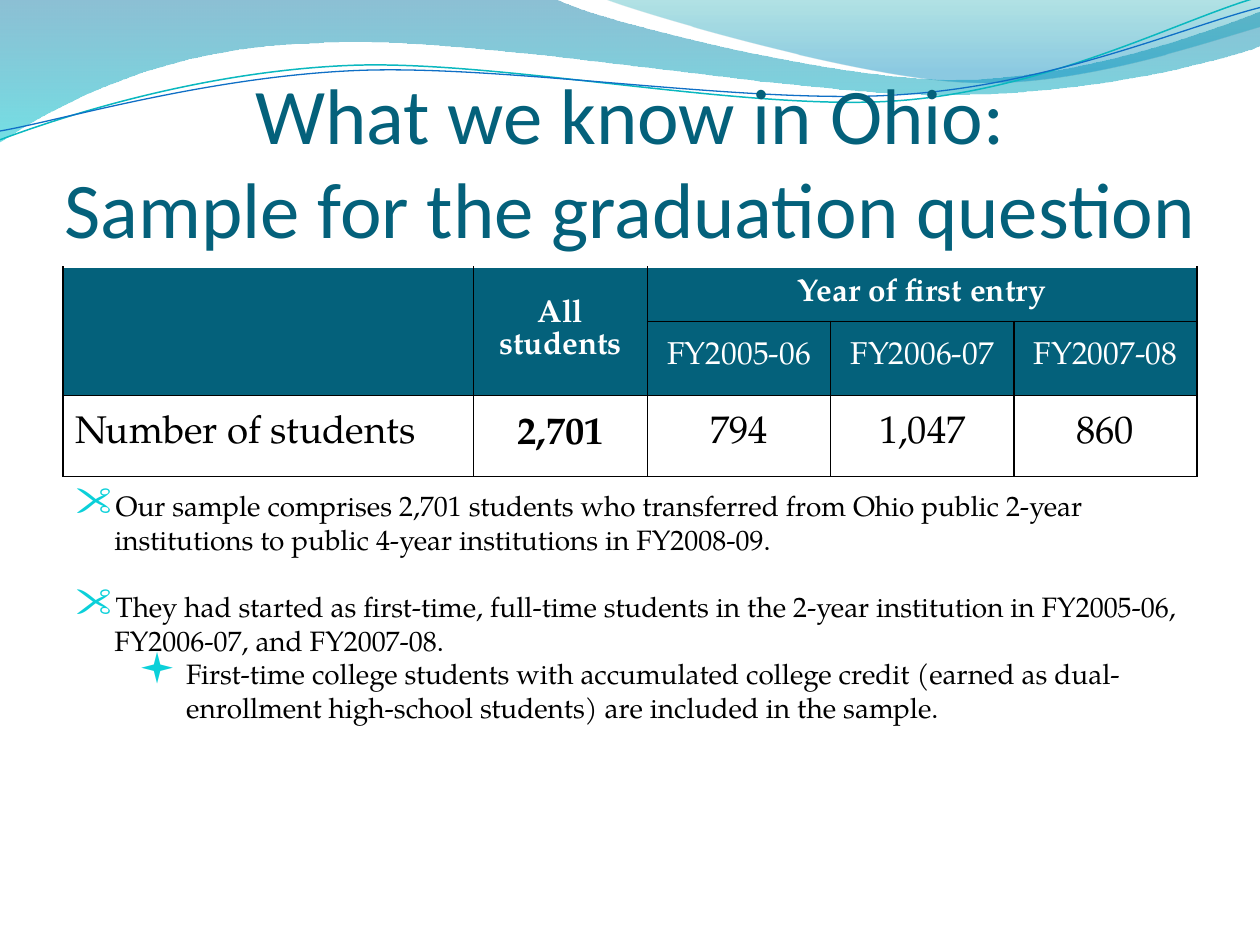
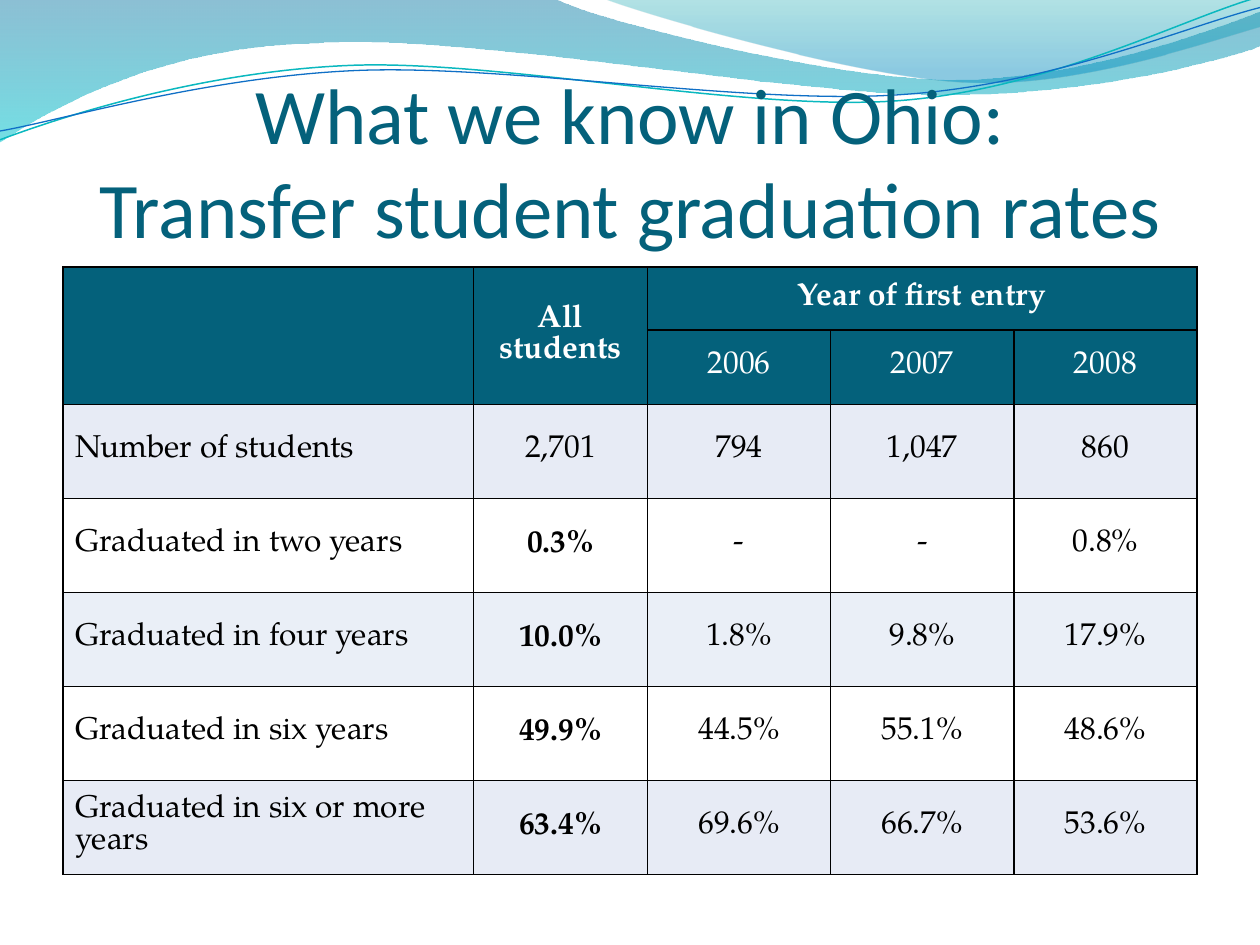
from lxml import etree
from pptx import Presentation
from pptx import util as u
from pptx.dml.color import RGBColor
from pptx.enum import text
from pptx.oxml import ns

# Shared look
COLORS = {"teal": "04617B", "white": "FFFFFF", "black": "000000", "bullet": "0BD0D9",
          "band": "E7EBF5", "light_band": "EAEFF7", "cyan_line": "0AB8BF", "blue_line": "0F6FC6"}
TITLE_FONT, BODY_FONT, BULLET_FONT = "Calibri", "TeX Gyre Pagella", "Wingdings"
TABLE_LEFT, TABLE_TOP, CONTENT_WIDTH = 0.5, 2.12, 9
LABEL_WIDTH, TOTAL_WIDTH = 3.26, 1.38

# Waves: points are (x, y); six numbers make a Bezier curve
# Gradient stops: position, colour, opacity in percent
WAVES = [
    {"start": (0, 0), "stops": [(0, "0074A1", 45), (1, "00C6CF", 55)],
     "segments": [(4.4, -0.01), (4.76, 0.17, 6.64, 0.63, 7.58, 0.63),
                  (8.53, 0.63, 9.58, 0.26, 10, 0.09), (10.01, 0.36),
                  (9.83, 0.44, 8.7, 0.76, 7.46, 0.75), (6.22, 0.75, 3.82, 0.28, 2.57, 0.34),
                  (1.29, 0.36, 0.46, 0.83, -0.01, 1.13)]},
    {"start": (4.79, -0.01), "stops": [(0, "00A1A9", 30), (0.8, "008BBF", 45)],
     "segments": [(5.09, 0.11, 6.82, 0.62, 7.69, 0.65), (8.56, 0.69, 9.61, 0.32, 10, 0.21),
                  (10, 0)]},
    {"start": (0, 1.11), "line": ("cyan_line", 0.85),
     "segments": [(0.48, 0.93, 1.58, 0.57, 2.77, 0.52), (3.95, 0.47, 5.93, 0.89, 7.13, 0.8),
                  (8.33, 0.71, 9.38, 0.15, 9.98, -0.02)]},
    {"start": (0, 1.04), "line": ("blue_line", 0.75),
     "segments": [(0.47, 0.96, 1.64, 0.61, 2.83, 0.56), (4.03, 0.51, 5.97, 0.84, 7.17, 0.75),
                  (8.36, 0.67, 9.41, 0.21, 10, 0.06)]},
]

# Slide content
SLIDES = [
    {"title": "What we know in Ohio:\vSample for the graduation question",
     "years": ["FY2005-06", "FY2006-07", "FY2007-08"],
     "rows": [["Number of students", "2,701", "794", "1,047", "860"]],
     "bold_totals": [True], "fills": ["white"], "body_size": 22, "top_border": "white",
     "header_heights": [0.43, 0.49], "table_height": 1.56,
     "bullets": [
         (0, 0, "Our sample comprises 2,701 students who transferred from Ohio public 2-year "
                "institutions to public 4-year institutions in FY2008-09."),
         (0, 19.2, "They had started as first-time, full-time students in the 2-year institution "
                   "in FY2005-06, FY2006-07, and FY2007-08."),
         (1, 0, "First-time college students with accumulated college credit (earned as "
                "dual-enrollment high-school students) are included in the sample."),
     ]},
    {"title": "What we know in Ohio:\vTransfer student graduation rates",
     "years": ["2006", "2007", "2008"],
     "rows": [["Number of students", "2,701", "794", "1,047", "860"],
              ["Graduated in two years", "0.3%", "-", "-", "0.8%"],
              ["Graduated in four years", "10.0%", "1.8%", "9.8%", "17.9%"],
              ["Graduated in six years", "49.9%", "44.5%", "55.1%", "48.6%"],
              ["Graduated in six or more years", "63.4%", "69.6%", "66.7%", "53.6%"]],
     "bold_totals": [False, True, True, True, True],
     "fills": ["band", "white", "light_band", "white", "band"],
     "body_size": 18, "top_border": "black",
     "header_heights": [0.5, 0.57], "table_height": 4.8, "bullets": []},
]
# Bullet level: character, left margin, hanging indent
BULLET_LEVELS = [("•", 0.31, 0.31), ("▪", 0.88, 0.38)]


def rgb(name):
    return RGBColor.from_string(COLORS[name])


def apply(target, values):
    for name, value in values.items():
        setattr(target, name, value)


def add_run(paragraph, words, size, color, font=BODY_FONT, bold=False):
    paragraph.text = words
    for run in paragraph.runs:
        apply(run.font, {"name": font, "size": u.Pt(size), "bold": bold})
        run.font.color.rgb = rgb(color)


def add_text_box(slide, left, top, width, height):
    frame = slide.shapes.add_textbox(*map(u.Inches, (left, top, width, height))).text_frame
    frame.word_wrap = True
    return frame


# Waves at the top
def bend(shape, segments):
    """Turn each run of three straight steps into one Bezier curve."""
    steps = iter(list(shape._element.iter(ns.qn("a:lnTo"))))
    for segment in segments:
        step = next(steps)
        if len(segment) == 6:
            step.tag = ns.qn("a:cubicBezTo")
            for _ in range(2):
                extra = next(steps)
                step.append(extra[0])
                extra.getparent().remove(extra)


def add_wave(slide, wave):
    points = [(u.Inches(x), u.Inches(y)) for segment in [wave["start"], *wave["segments"]]
              for x, y in zip(segment[::2], segment[1::2])]
    builder = slide.shapes.build_freeform(*points[0])
    builder.add_line_segments(points[1:], close="stops" in wave)
    shape = builder.convert_to_shape()
    shape.shadow.inherit = False
    if "line" in wave:
        color, width = wave["line"]
        shape.fill.background()
        shape.line.color.rgb = rgb(color)
        shape.line.width = u.Pt(width)
    else:
        shape.line.fill.background()
        fill_wave(shape, wave["stops"])
    bend(shape, wave["segments"])


def fill_wave(shape, stops):
    shape.fill.gradient()
    shape.fill.gradient_angle = 270
    for stop, (position, color, _) in zip(shape.fill.gradient_stops, stops):
        stop.position = position
        stop.color.rgb = RGBColor.from_string(color)
    gradient = shape._element.spPr.find(ns.qn("a:gradFill"))
    for element, (_, _, opacity) in zip(gradient.iter(ns.qn("a:srgbClr")), stops):
        etree.SubElement(element, ns.qn("a:alpha"), val=str(opacity * 1000))


def add_title(slide, words):
    frame = add_text_box(slide, 0.5, 0.77, CONTENT_WIDTH, 1.25)
    apply(frame, {"margin_left": 0, "margin_right": 0, "margin_bottom": 0,
                  "vertical_anchor": text.MSO_ANCHOR.BOTTOM})
    paragraph = frame.paragraphs[0]
    paragraph.alignment = text.PP_ALIGN.CENTER
    add_run(paragraph, words, 45, "teal", TITLE_FONT)


# Table
def set_borders(cell, top_color):
    properties = cell._tc.get_or_add_tcPr()
    for index, side in enumerate("LRTB"):
        line = etree.Element(ns.qn(f"a:ln{side}"), w=str(u.Pt(1)))
        fill = etree.SubElement(line, ns.qn("a:solidFill"))
        color = COLORS[top_color if side == "T" else "black"]
        etree.SubElement(fill, ns.qn("a:srgbClr"), val=color)
        properties.insert(index, line)


def add_table(slide, content):
    headers = [["", "All students", "Year of first entry", "", ""], ["", ""] + content["years"]]
    rows = headers + content["rows"]
    count = len(content["rows"])
    body_height = (content["table_height"] - sum(content["header_heights"])) / count
    heights = content["header_heights"] + [body_height] * count
    year_width = (CONTENT_WIDTH - LABEL_WIDTH - TOTAL_WIDTH) / 3
    widths = [LABEL_WIDTH, TOTAL_WIDTH] + [year_width] * 3
    table = slide.shapes.add_table(
        len(rows), len(widths), u.Inches(TABLE_LEFT), u.Inches(TABLE_TOP),
        u.Inches(CONTENT_WIDTH), u.Inches(content["table_height"])).table
    apply(table, {"first_row": False, "horz_banding": False})
    for column, width in zip(table.columns, widths):
        column.width = u.Inches(width)
    for row, height in zip(table.rows, heights):
        row.height = u.Inches(height)

    fills = ["teal"] * 2 + content["fills"]
    bold_totals = [True, False] + content["bold_totals"]
    for r, row in enumerate(rows):
        header = r < len(headers)
        size = 18 if header else content["body_size"]
        for c, words in enumerate(row):
            cell = table.cell(r, c)
            apply(cell, {"vertical_anchor": text.MSO_ANCHOR.MIDDLE, "margin_top": u.Inches(0.04)})
            cell.fill.solid()
            cell.fill.fore_color.rgb = rgb(fills[r])
            set_borders(cell, content["top_border"] if r == 0 else "black")
            if words:
                paragraph = cell.text_frame.paragraphs[0]
                align = text.PP_ALIGN.CENTER if c else text.PP_ALIGN.LEFT
                apply(paragraph, {"alignment": align, "line_spacing": u.Pt(size)})
                bold = r == 0 or (c == 1 and bold_totals[r])
                add_run(paragraph, words, size, "white" if header else "black", bold=bold)
    for first, last in (((0, 0), (1, 0)), ((0, 1), (1, 1)), ((0, 2), (0, 4))):
        table.cell(*first).merge(table.cell(*last))


# Bulleted notes below the table
def add_bullets(slide, bullets):
    frame = add_text_box(slide, 0.5, 3.83, CONTENT_WIDTH, 3.14)
    for index, (level, gap, words) in enumerate(bullets):
        paragraph = frame.add_paragraph() if index else frame.paragraphs[0]
        apply(paragraph, {"level": level, "space_before": u.Pt(gap)})
        add_run(paragraph, words, 16, "black")
        character, margin, hanging = BULLET_LEVELS[level]
        properties = paragraph._p.get_or_add_pPr()
        properties.set("marL", str(u.Inches(margin)))
        properties.set("indent", str(-u.Inches(hanging)))
        color = etree.SubElement(properties, ns.qn("a:buClr"))
        etree.SubElement(color, ns.qn("a:srgbClr"), val=COLORS["bullet"])
        etree.SubElement(properties, ns.qn("a:buSzPct"), val="150000")
        etree.SubElement(properties, ns.qn("a:buFont"), typeface=BULLET_FONT)
        etree.SubElement(properties, ns.qn("a:buChar"), char=character)


def main():
    presentation = Presentation()
    apply(presentation, {"slide_width": u.Inches(10), "slide_height": u.Inches(7.5)})
    for content in SLIDES:
        slide = presentation.slides.add_slide(presentation.slide_layouts[6])
        for wave in WAVES:
            add_wave(slide, wave)
        add_title(slide, content["title"])
        add_table(slide, content)
        if content["bullets"]:
            add_bullets(slide, content["bullets"])
    presentation.save("out.pptx")


if __name__ == "__main__":
    main()
